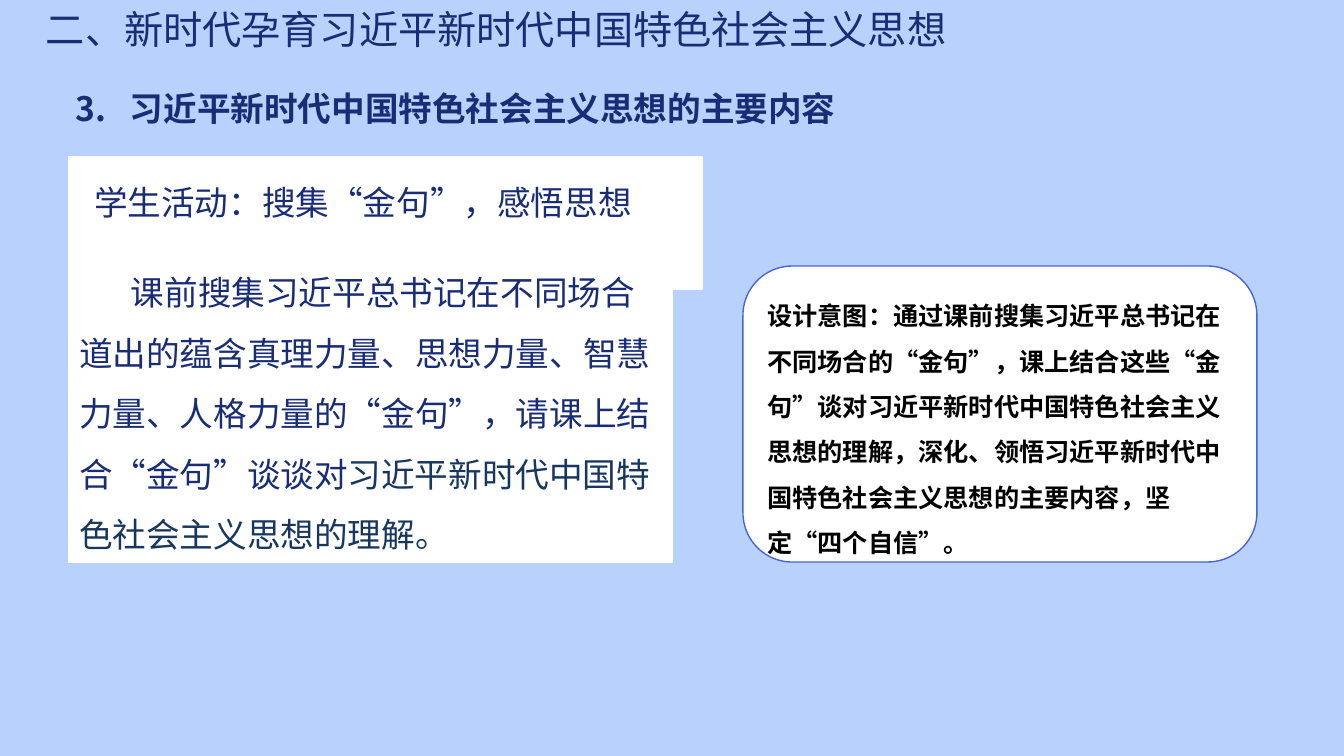
import pptx
import pptx.dml.color
import pptx.enum.shapes
import pptx.enum.text
import pptx.oxml
import pptx.oxml.ns
import pptx.util

PX = 914400 / 100.8
NAVY, SLATE, BLACK = "192C76", "17375E", "000000"
WHITE, SKY, OUTLINE = "FFFFFF", "B9D2FD", "4765D8"
RECT = pptx.enum.shapes.MSO_SHAPE.RECTANGLE
ROUNDED = pptx.enum.shapes.MSO_SHAPE.ROUNDED_RECTANGLE


def emu(px):
    return pptx.util.Emu(round(px * PX))


def rgb(value):
    return pptx.dml.color.RGBColor.from_string(value)


class LessonSlide:
    font_name = "Noto Sans CJK SC"

    def __init__(self, presentation):
        self.slide = presentation.slides.add_slide(presentation.slide_layouts[6])
        fill = self.slide.background.fill
        fill.solid()
        fill.fore_color.rgb = rgb(SKY)

    def format_run(self, run, size, color, bold):
        run.font.size = pptx.util.Pt(size)
        run.font.bold = bold
        run.font.color.rgb = rgb(color)
        run.font.name = self.font_name
        east_asian = pptx.oxml.parse_xml(
            f'<a:ea {pptx.oxml.ns.nsdecls("a")} typeface="{self.font_name}"/>')
        run.font._element.append(east_asian)

    def set_text(self, shape, text, size, color, bold=False, left_inset=10,
                 first_indent=0, tab=0, spacing=1.0, ending=None):
        """Fill a shape with one paragraph; ending is an optional (text, color) tail."""
        frame = shape.text_frame
        frame.word_wrap = True
        frame.vertical_anchor = pptx.enum.text.MSO_ANCHOR.TOP
        frame.margin_left, frame.margin_right = emu(left_inset), emu(10)
        frame.margin_top = frame.margin_bottom = emu(5)
        frame.text = text
        paragraph = frame.paragraphs[0]
        paragraph.alignment = pptx.enum.text.PP_ALIGN.LEFT
        paragraph.line_spacing = spacing
        properties = paragraph._p.get_or_add_pPr()
        if first_indent:
            properties.set("indent", str(emu(first_indent)))
        if tab:
            properties.append(pptx.oxml.parse_xml(
                f'<a:tabLst {pptx.oxml.ns.nsdecls("a")}>'
                f'<a:tab pos="{emu(tab)}" algn="l"/></a:tabLst>'))
        self.format_run(paragraph.runs[0], size, color, bold)
        if ending:
            run = paragraph.add_run()
            run.text, ending_color = ending
            self.format_run(run, size, ending_color, bold)

    def heading(self, box, text, size, **style):
        shape = self.slide.shapes.add_textbox(*map(emu, box))
        self.set_text(shape, text, size, NAVY, **style)

    def panel(self, kind, box, text, size, color, line=WHITE, **style):
        shape = self.slide.shapes.add_shape(kind, *map(emu, box))
        shape.shadow.inherit = False
        shape.fill.solid()
        shape.fill.fore_color.rgb = rgb(WHITE)
        shape.line.color.rgb = rgb(line)
        shape.line.width = pptx.util.Pt(1)
        self.set_text(shape, text, size, color, spacing=1.5, **style)


def main():
    presentation = pptx.Presentation()
    presentation.slide_width, presentation.slide_height = emu(1344), emu(756)
    lesson = LessonSlide(presentation)

    lesson.heading((18, 0, 985, 57), "二、新时代孕育习近平新时代中国特色社会主义思想",
                   28, left_inset=28)
    lesson.panel(RECT, (69, 157, 633, 132), "学生活动：搜集“金句”，感悟思想",
                 24, NAVY, left_inset=25)
    lesson.panel(
        ROUNDED, (743, 266, 514, 296),
        "设计意图：通过课前搜集习近平总书记在不同场合的“金句”，课上结合这些“金句”"
        "谈对习近平新时代中国特色社会主义思想的理解，深化、领悟习近平新时代中国特色"
        "社会主义思想的主要内容，坚定“四个自信”。",
        18, BLACK, line=OUTLINE, bold=True)
    lesson.heading((50, 83, 828, 50), "3.\t习近平新时代中国特色社会主义思想的主要内容",
                   24, bold=True, left_inset=26, tab=54)
    lesson.panel(
        RECT, (69, 247, 603, 315),
        "课前搜集习近平总书记在不同场合道出的蕴含真理力量、思想力量、智慧力量、"
        "人格力量的“金句”，请课上结合“金句”谈谈对",
        24, NAVY, first_indent=52,
        ending=("习近平新时代中国特色社会主义思想的理解。", SLATE))

    presentation.save("out.pptx")


if __name__ == "__main__":
    main()
